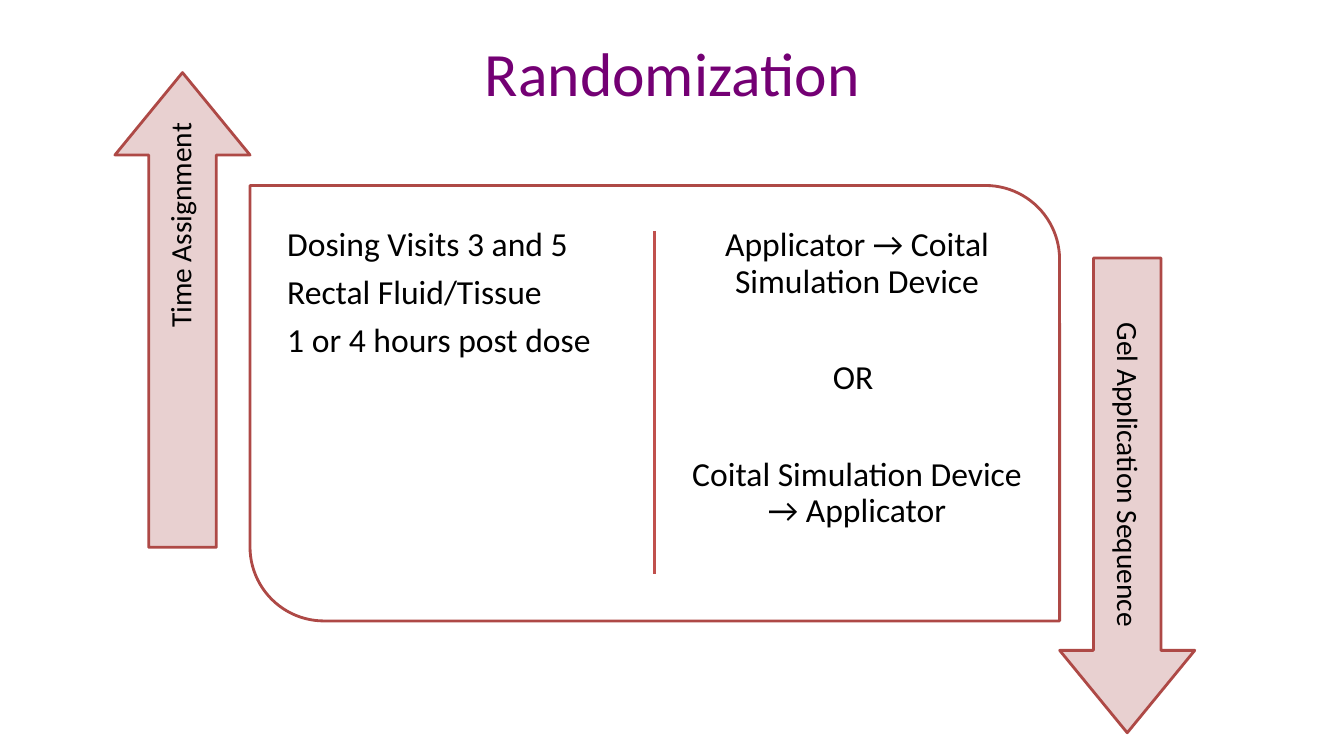
import pptx
import pptx.dml.color
import pptx.enum.shapes
import pptx.enum.text
import pptx.oxml.ns
import pptx.util
from lxml import etree

EMU_PER_PX = 9144
COLORS = {
    "title": "740074",
    "text": "000000",
    "panel": "FFFFFF",
    "outline": "AE4946",
    "divider": "C0504D",
    "arrow": "E8D0D0",
}
SHAPES = pptx.enum.shapes.MSO_SHAPE
ALIGN = pptx.enum.text.PP_ALIGN
ANCHOR = pptx.enum.text.MSO_ANCHOR


def to_emu(*lengths):
    """Turn px lengths into EMU."""
    return [pptx.util.Emu(round(length * EMU_PER_PX)) for length in lengths]


def to_color(name):
    """Look up a named colour."""
    return pptx.dml.color.RGBColor.from_string(COLORS[name])


def turned(box, angle):
    """Give the unrotated frame of a box that fills its place once turned a quarter."""
    left, top, width, height = box
    if angle % 180 == 0:
        return box
    return left + (width - height) / 2, top + (height - width) / 2, height, width


def add_text(page, box, paragraphs, size=24, color="text", align=ALIGN.LEFT,
             anchor=ANCHOR.TOP, inset=(10, 10), line=0.9, after=8.4, angle=0):
    """Place a text box with one format for all of its paragraphs."""
    text_box = page.shapes.add_textbox(*to_emu(*turned(box, angle)))
    text_box.rotation = angle
    frame = text_box.text_frame
    frame.word_wrap = True
    frame.vertical_anchor = anchor
    frame.margin_left, frame.margin_top = to_emu(*inset)
    frame.margin_right, frame.margin_bottom = to_emu(*inset)
    for index, text in enumerate(paragraphs):
        para = frame.add_paragraph() if index else frame.paragraphs[0]
        para.alignment = align
        para.line_spacing = line
        para.space_after = pptx.util.Pt(after)
        span = para.add_run()
        span.text = text
        span.font.name = "Calibri"
        span.font.size = pptx.util.Pt(size)
        span.font.color.rgb = to_color(color)


def add_outlined(page, kind, box, fill, adjustments, angle=0):
    """Place a preset shape with the slide's outline."""
    shape = page.shapes.add_shape(kind, *to_emu(*turned(box, angle)))
    shape.rotation = angle
    shape.shadow.inherit = False
    for index, value in enumerate(adjustments):
        shape.adjustments[index] = value
    shape.fill.solid()
    shape.fill.fore_color.rgb = to_color(fill)
    shape.line.color.rgb = to_color("outline")
    shape.line.width = pptx.util.Pt(2)


def add_divider(page, x, top, bottom):
    """Draw a vertical divider."""
    divider = page.shapes.add_connector(
        pptx.enum.shapes.MSO_CONNECTOR.STRAIGHT, *to_emu(x, top, x, bottom))
    divider.line.color.rgb = to_color("divider")
    divider.line.width = pptx.util.Pt(2)
    properties = divider._element.spPr
    etree.SubElement(properties, pptx.oxml.ns.qn("a:effectLst"))


def add_panel(page, box, visits, sequences):
    """Build the rounded panel with two columns and a divider."""
    left, top, width, height = box
    column_width, margin = 348, 27
    add_outlined(page, SHAPES.ROUND_2_DIAG_RECTANGLE, box, "panel", (0, 0.17))
    add_divider(page, left + width // 2, top + 45, top + height - 47)
    column = (top + 32, column_width, height - 66)
    add_text(page, (left + margin, *column), visits)
    add_text(page, (left + width - margin - column_width, *column), sequences,
             align=ALIGN.CENTER, after=43.2)


def add_labelled_arrow(page, box, label, angle, align):
    """Build an upright arrow whose label starts at the tail end."""
    left, top, width, height = box
    label_width, label_length = width // 2, 430
    label_top = top if angle == 90 else top + height - label_length
    label_box = (left + (width - label_width) // 2, label_top, label_width, label_length)
    add_outlined(page, SHAPES.RIGHT_ARROW, box, "arrow", (0.5, 0.61), angle)
    add_text(page, label_box, [label], size=21, align=align, anchor=ANCHOR.MIDDLE,
             inset=(9, 9), after=7.35, angle=angle)


def build_randomization(page):
    """Place the title, the panel and both arrows."""
    add_panel(page, (248, 184, 803, 432),
              ["Dosing Visits 3 and 5", "Rectal Fluid/Tissue", "1 or 4 hours post dose"],
              ["Applicator → Coital Simulation Device", "OR ",
               "Coital Simulation Device → Applicator"])
    add_labelled_arrow(page, (114, 72, 134, 471), "Time Assignment", 270, ALIGN.RIGHT)
    add_labelled_arrow(page, (1051, 256, 134, 471), "Gel Application Sequence", 90, ALIGN.CENTER)
    add_text(page, (67, 30, 1200, 125), ["Randomization"], size=44, color="title",
             align=ALIGN.CENTER, inset=(10, 5), line=1.0, after=0)


def main():
    """Make the deck and save it."""
    deck = pptx.Presentation()
    deck.slide_width, deck.slide_height = to_emu(1333, 750)
    build_randomization(deck.slides.add_slide(deck.slide_layouts[6]))
    deck.save("out.pptx")


if __name__ == "__main__":
    main()
